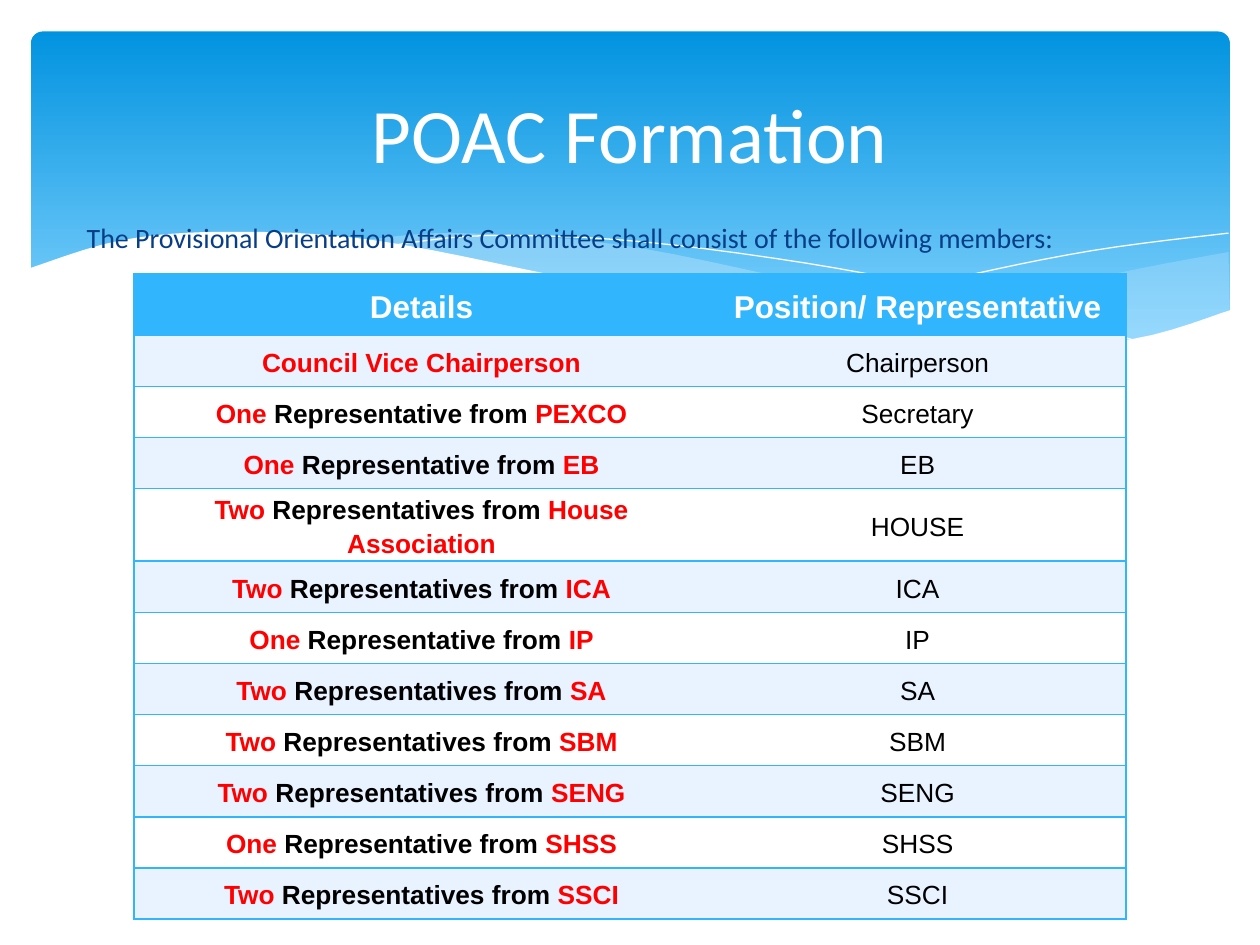
import pptx
import pptx.dml.color
import pptx.enum.shapes
import pptx.enum.text
import pptx.oxml
import pptx.oxml.ns
import pptx.util

Pt = pptx.util.Pt
ALIGN = pptx.enum.text.PP_ALIGN
ANCHOR = pptx.enum.text.MSO_ANCHOR
XML_NS = pptx.oxml.ns.nsdecls("a")

THEME = {
    "banner_top": "0293E0", "banner_bottom": "83D3FE", "wave": "C6E7FC",
    "white": "FFFFFF", "navy": "073E87", "accent": "31B6FD", "band": "E8F3FF",
    "red": "FF0000", "black": "000000",
    "heading_font": "Calibri", "table_font": "Arial",
    "title": 44, "intro": 16, "header": 18, "cell": 15,
}

TITLE = "POAC Formation"
INTRO = "The Provisional Orientation Affairs Committee shall consist of the following members:"
HEADERS = ("Details", "Position/ Representative")
CHAIR = ("Council Vice Chairperson", "Chairperson")
# number of representatives, body they come from, position
MEMBERS = [
    ("One", "PEXCO", "Secretary"),
    ("One", "EB", "EB"),
    ("Two", "House Association", "HOUSE"),
    ("Two", "ICA", "ICA"),
    ("One", "IP", "IP"),
    ("Two", "SA", "SA"),
    ("Two", "SBM", "SBM"),
    ("Two", "SENG", "SENG"),
    ("One", "SHSS", "SHSS"),
    ("Two", "SSCI", "SSCI"),
]

# left, top, width, height
BANNER_BOX = (17.8, 18, 684.9, 194.4)
INTRO_BOX = (42.5, 122.4, 640.8, 396.7)
TITLE_BOX = (36, 26.6, 648, 98.6)
TABLE_LEFT, TABLE_TOP = 76.5, 156.4
COLUMN_WIDTHS = (328.7, 238.3)
HEADER_HEIGHT, ROW_HEIGHT = 35.2, 29.25

# Each edge is a smooth curve through its knots; a filled wave joins its edges.
CURVE_STEPS = 6
FILLED_WAVES = {
    "right": {"fill": "wave", "opacity": 29, "edges": [
        [(702, 144), (641.5, 155.5), (579.6, 170.6), (475.9, 190.8)],
        [(475.9, 190.8), (536.4, 198), (601.2, 199.4), (657.4, 192.2), (702.7, 177.8)],
    ]},
    "middle": {"fill": "wave", "opacity": 40, "edges": [
        [(643, 196.6), (558, 182.9), (452.9, 159.8), (352.1, 139.7), (259.9, 133.2), (205.9, 137.5)],
        [(205.9, 137.5), (290.9, 151.9), (407.5, 178.6), (500.4, 194.4), (589, 200.2), (643, 196.6)],
    ]},
    "front": {"fill": "white", "opacity": 100, "edges": [
        [(703.4, 177.1), (647.3, 193.7), (571, 198.7), (466.6, 188.6), (321.8, 158.4),
         (210.2, 136.8), (127.4, 132.5), (68.4, 137.5), (16.6, 153.4)],
        [(16.6, 236.9), (703.4, 236.9)],
    ]},
}
WAVE_LINES = {
    "falling": [(222.5, 140.4), (278.6, 134.6), (367.2, 138.2), (478.8, 153.4), (572.4, 173.5), (653, 195.8)],
    "rising": [(441.4, 185), (538.6, 160.6), (623.5, 143.3), (702, 133.2)],
}


def rgb(name):
    return pptx.dml.color.RGBColor.from_string(THEME[name])


def smooth(knots):
    """Return points on a Catmull-Rom curve that passes through every knot."""
    padded = [knots[0], *knots, knots[-1]]
    points = [knots[0]]
    for a, b, c, d in zip(padded, padded[1:], padded[2:], padded[3:]):
        for step in range(1, CURVE_STEPS + 1):
            t = step / CURVE_STEPS
            points.append(tuple(
                (2 * q + (r - p) * t + (2 * p - 5 * q + 4 * r - s) * t ** 2
                 + (3 * q - p - 3 * r + s) * t ** 3) / 2
                for p, q, r, s in zip(a, b, c, d)))
    return points


def add_outline(shapes, edges, close):
    points = [(Pt(x), Pt(y)) for edge in edges for x, y in smooth(edge)]
    builder = shapes.build_freeform(*points[0], scale=1.0)
    builder.add_line_segments(points[1:], close=close)
    sp = builder.convert_to_shape()
    sp.shadow.inherit = False
    return sp


def add_filled_wave(shapes, edges, fill, opacity):
    sp = add_outline(shapes, edges, close=True)
    sp.line.fill.background()
    sp.fill.solid()
    sp.fill.fore_color.rgb = rgb(fill)
    if opacity < 100:
        color = next(sp.element.iter(pptx.oxml.ns.qn("a:srgbClr")))
        color.append(pptx.oxml.parse_xml(f'<a:alpha {XML_NS} val="{opacity * 1000}"/>'))


def add_wave_line(shapes, knots):
    sp = add_outline(shapes, [knots], close=False)
    sp.fill.background()
    sp.line.color.rgb = rgb("white")
    sp.line.width = Pt(0)


def add_waves(slide):
    shapes = slide.shapes.add_group_shape().shapes
    add_filled_wave(shapes, **FILLED_WAVES["right"])
    add_filled_wave(shapes, **FILLED_WAVES["middle"])
    for knots in WAVE_LINES.values():
        add_wave_line(shapes, knots)
    add_filled_wave(shapes, **FILLED_WAVES["front"])


def add_banner(slide):
    sp = slide.shapes.add_shape(pptx.enum.shapes.MSO_SHAPE.ROUNDED_RECTANGLE, *map(Pt, BANNER_BOX))
    sp.adjustments[0] = 0.034
    sp.shadow.inherit = False
    sp.line.fill.background()
    sp.fill.gradient()
    sp.fill.gradient_angle = 270
    top, bottom = sp.fill.gradient_stops
    top.color.rgb, top.position = rgb("banner_top"), 0
    bottom.color.rgb, bottom.position = rgb("banner_bottom"), 0.9


def add_text(slide, box, text, size, color, align, anchor):
    tf = slide.shapes.add_textbox(*map(Pt, box)).text_frame
    tf.word_wrap = True
    tf.vertical_anchor = anchor
    p = tf.paragraphs[0]
    p.text = text
    p.alignment = align
    p.font.name = THEME["heading_font"]
    p.font.size = Pt(THEME[size])
    p.font.color.rgb = rgb(color)
    return p


def set_borders(cell, outer_side):
    """Outline the cell above, below and on its outer side only."""
    line = f'<a:solidFill><a:srgbClr val="{THEME["accent"]}"/></a:solidFill>'
    for side in "LRTB":
        paint = line if side in ("T", "B", outer_side) else "<a:noFill/>"
        cell._tc.get_or_add_tcPr().append(pptx.oxml.parse_xml(
            f'<a:ln{side} {XML_NS} w="{Pt(1)}">{paint}</a:ln{side}>'))


def fill_cell(cell, runs, size, bold, fill, outer_side):
    set_borders(cell, outer_side)
    cell.fill.solid()
    cell.fill.fore_color.rgb = rgb(fill)
    cell.vertical_anchor = ANCHOR.MIDDLE
    cell.margin_left = cell.margin_right = Pt(5)
    cell.margin_top = cell.margin_bottom = 0
    p = cell.text_frame.paragraphs[0]
    p.alignment = ALIGN.CENTER
    p.line_spacing = 1.15
    for text, color in runs:
        r = p.add_run()
        r.text = text
        r.font.name = THEME["table_font"]
        r.font.size = Pt(THEME[size])
        r.font.bold = bold
        r.font.color.rgb = rgb(color)


def member_runs(count, body):
    noun = "Representative" if count == "One" else "Representatives"
    return [(f"{count} ", "red"), (f"{noun} from ", "black"), (body, "red")]


def add_members_table(slide):
    rows = [([(CHAIR[0], "red")], CHAIR[1])]
    rows += [(member_runs(count, body), position) for count, body, position in MEMBERS]
    heights = [HEADER_HEIGHT] + [ROW_HEIGHT] * len(rows)

    table = slide.shapes.add_table(len(heights), len(HEADERS), Pt(TABLE_LEFT), Pt(TABLE_TOP),
                                   Pt(sum(COLUMN_WIDTHS)), Pt(sum(heights))).table
    table.first_row = table.horz_banding = False
    for column, width in zip(table.columns, COLUMN_WIDTHS):
        column.width = Pt(width)
    for row, height in zip(table.rows, heights):
        row.height = Pt(height)

    for col, (header, side) in enumerate(zip(HEADERS, "LR")):
        fill_cell(table.cell(0, col), [(header, "white")], "header", True, "accent", side)
    for i, (details, position) in enumerate(rows, 1):
        fill = "band" if i % 2 else "white"
        fill_cell(table.cell(i, 0), details, "cell", True, fill, "L")
        fill_cell(table.cell(i, 1), [(position, "black")], "cell", False, fill, "R")


def main():
    prs = pptx.Presentation()
    prs.slide_width, prs.slide_height = Pt(720), Pt(540)
    slide = prs.slides.add_slide(prs.slide_layouts[6])
    add_banner(slide)
    add_waves(slide)
    intro = add_text(slide, INTRO_BOX, INTRO, "intro", "navy", ALIGN.LEFT, ANCHOR.TOP)
    intro.space_before = Pt(3.2)
    add_text(slide, TITLE_BOX, TITLE, "title", "white", ALIGN.CENTER, ANCHOR.MIDDLE)
    add_members_table(slide)
    prs.save("out.pptx")


if __name__ == "__main__":
    main()
